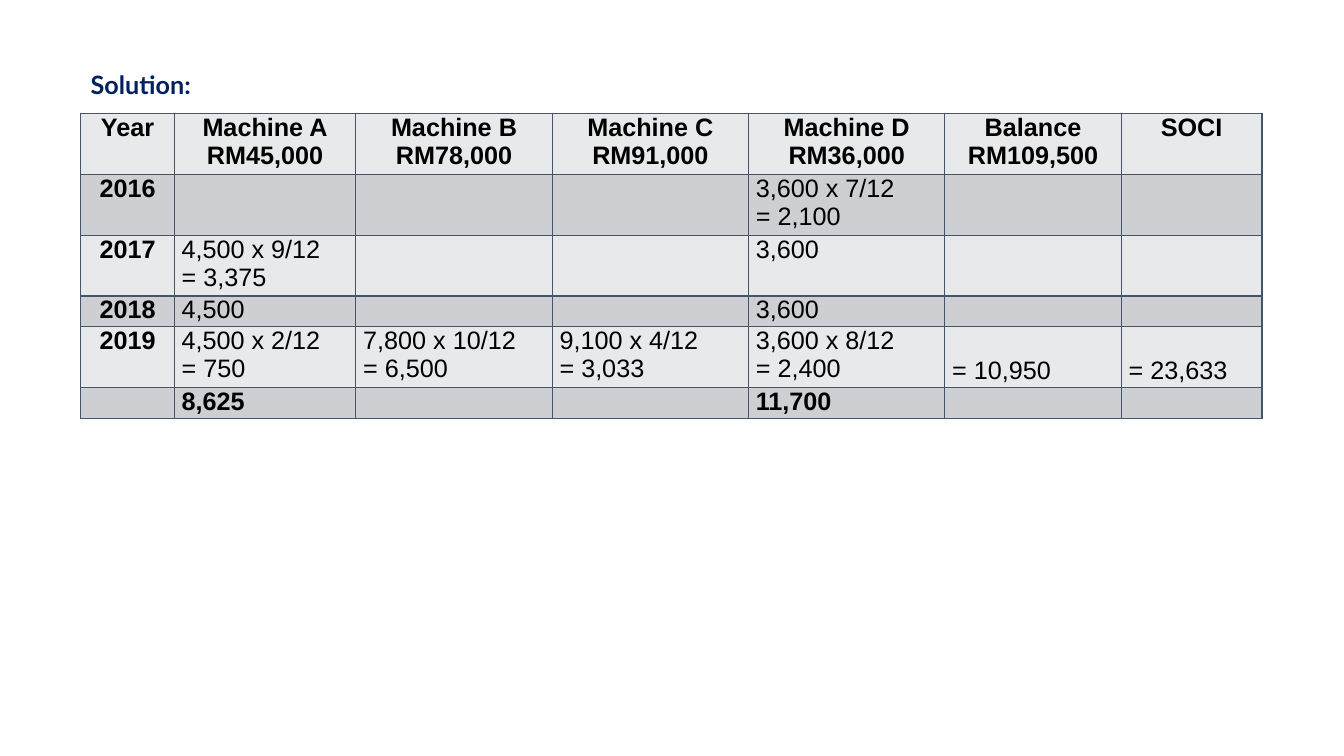
import pptx
import pptx.dml.color
import pptx.enum.text
import pptx.oxml.ns
import pptx.util
from lxml import etree

RGB = pptx.dml.color.RGBColor
BLACK = RGB(0x00, 0x00, 0x00)
NAVY = RGB(0x00, 0x20, 0x60)
LIGHT = RGB(0xE8, 0xE9, 0xEA)
DARK = RGB(0xCD, 0xCF, 0xD3)
BORDER = RGB(0x44, 0x54, 0x69)

ALIGN = pptx.enum.text.PP_ALIGN
ANCHOR = pptx.enum.text.MSO_ANCHOR
FONT_SIZE = 18

COLUMN_WIDTHS = [89, 173, 187, 187, 187, 168, 134]
LINE_HEIGHT = 29
ROWS = [
    ["Year", "Machine A\nRM45,000", "Machine B\nRM78,000", "Machine C\nRM91,000",
     "Machine D\nRM36,000", "Balance\nRM109,500", "SOCI"],
    ["2016", "", "", "", "3,600 x 7/12\n= 2,100", "", ""],
    ["2017", "4,500 x 9/12\n= 3,375", "", "", "3,600", "", ""],
    ["2018", "4,500", "", "", "3,600", "", ""],
    ["2019", "4,500 x 2/12\n= 750", "7,800 x 10/12\n= 6,500", "9,100 x 4/12\n= 3,033",
     "3,600 x 8/12\n= 2,400", "= 10,950", "= 23,633"],
    ["", "8,625", "", "", "11,700", "", ""],
]


def px(n):
    return pptx.util.Emu(n * 9525)


def write(tf, text, font="Arial", color=BLACK, bold=False, align=ALIGN.LEFT):
    for i, line in enumerate(text.split("\n")):
        p = tf.paragraphs[0] if i == 0 else tf.add_paragraph()
        p.alignment = align
        if not line:
            # Keep empty cells at the table's text size
            end = etree.SubElement(p._p, pptx.oxml.ns.qn("a:endParaRPr"))
            end.set("sz", str(FONT_SIZE * 100))
            continue
        r = p.add_run()
        r.text = line
        r.font.name = font
        r.font.size = pptx.util.Pt(FONT_SIZE)
        r.font.bold = bold
        r.font.color.rgb = color


def add_borders(cell):
    tcPr = cell._tc.get_or_add_tcPr()
    for i, side in enumerate(("lnL", "lnR", "lnT", "lnB")):
        ln = etree.Element(pptx.oxml.ns.qn("a:" + side), w="12700")
        fill = etree.SubElement(ln, pptx.oxml.ns.qn("a:solidFill"))
        etree.SubElement(fill, pptx.oxml.ns.qn("a:srgbClr"), val=str(BORDER))
        tcPr.insert(i, ln)


def add_heading(slide, x, y, w, h):
    tf = slide.shapes.add_textbox(px(x), px(y), px(w), px(h)).text_frame
    tf.word_wrap = True
    write(tf, "Solution:", font="Lato", color=NAVY, bold=True)


def add_depreciation_table(slide, x, y):
    line_counts = [max(text.count("\n") + 1 for text in row) for row in ROWS]
    w, h = sum(COLUMN_WIDTHS), sum(line_counts) * LINE_HEIGHT
    table = slide.shapes.add_table(len(ROWS), len(COLUMN_WIDTHS),
                                   px(x), px(y), px(w), px(h)).table
    table.first_row = table.horz_banding = False
    for column, width in zip(table.columns, COLUMN_WIDTHS):
        column.width = px(width)

    for i, row in enumerate(ROWS):
        table.rows[i].height = px(line_counts[i] * LINE_HEIGHT)
        for j, text in enumerate(row):
            cell = table.cell(i, j)
            cell.margin_left = cell.margin_right = px(7)
            cell.margin_top = cell.margin_bottom = 0
            cell.fill.solid()
            cell.fill.fore_color.rgb = DARK if i % 2 else LIGHT
            add_borders(cell)
            heading = i == 0 or j == 0
            write(cell.text_frame, text, bold=heading or i == len(ROWS) - 1,
                  align=ALIGN.CENTER if heading else ALIGN.LEFT)
            # Single results line up with the second line of their row
            if text.startswith("="):
                cell.vertical_anchor = ANCHOR.BOTTOM
                cell.margin_bottom = px(3)


def main():
    prs = pptx.Presentation()
    prs.slide_width, prs.slide_height = px(1280), px(720)
    slide = prs.slides.add_slide(prs.slide_layouts[6])
    add_depreciation_table(slide, 77, 108)
    add_heading(slide, 77, 61, 122, 38)
    prs.save("out.pptx")


if __name__ == "__main__":
    main()
